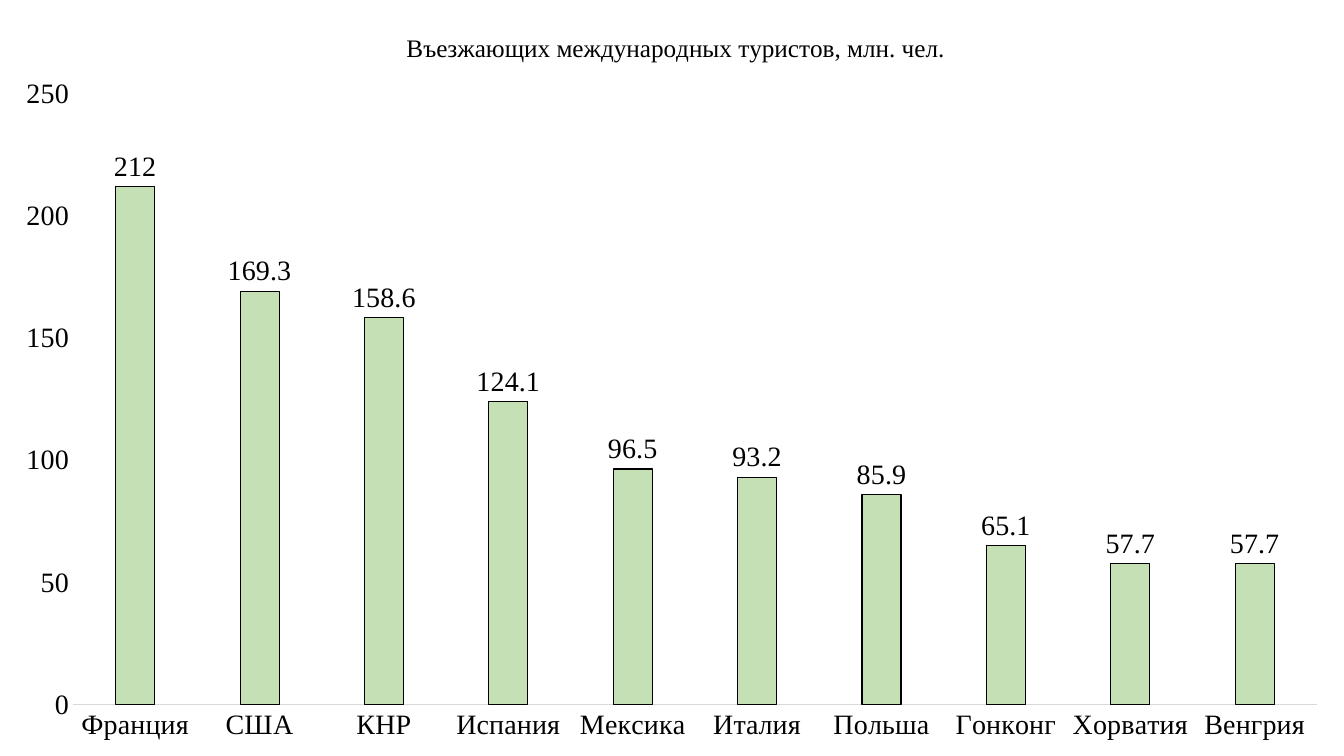
from dataclasses import dataclass

from lxml.etree import SubElement
from pptx import Presentation
from pptx.chart.data import CategoryChartData
from pptx.dml.color import RGBColor
from pptx.enum.chart import XL_CHART_TYPE, XL_LABEL_POSITION, XL_TICK_MARK
from pptx.oxml.ns import qn
from pptx.util import Emu, Pt


@dataclass(frozen=True)
class Theme:
    font: str = "Times New Roman"
    text: RGBColor = RGBColor(0, 0, 0)
    bar: RGBColor = RGBColor(0xC5, 0xE0, 0xB4)
    axis: RGBColor = RGBColor(0xD9, 0xD9, 0xD9)
    title_size: int = 18
    body_size: int = 20
    line_width: float = 0.75


THEME = Theme()
EMU_PER_PX = 914400 / 100.8
SLIDE_W, SLIDE_H = 1344, 756

TITLE = "Въезжающих международных туристов, млн. чел."
TOURISTS = {
    "Франция": 212,
    "США": 169.3,
    "КНР": 158.6,
    "Испания": 124.1,
    "Мексика": 96.5,
    "Италия": 93.2,
    "Польша": 85.9,
    "Гонконг": 65.1,
    "Хорватия": 57.7,
    "Венгрия": 57.7,
}


def px(n):
    return Emu(round(n * EMU_PER_PX))


def style_font(font, size=THEME.body_size, color=THEME.text):
    font.name = THEME.font
    font.size = Pt(size)
    font.bold = False
    font.color.rgb = color


def put_text(tf, text, **style):
    r = tf.paragraphs[0].add_run()
    r.text = text
    style_font(r.font, **style)


def style_line(line, color):
    line.color.rgb = color
    line.width = Pt(THEME.line_width)


def set_layout(parent, index, inner=False, **fractions):
    """Place a chart part by fractions of the chart's size."""
    for old in parent.findall(qn("c:layout")):
        parent.remove(old)
    layout = SubElement(parent, qn("c:layout"))
    parent.insert(index, layout)
    manual = SubElement(layout, qn("c:manualLayout"))
    if inner:
        SubElement(manual, qn("c:layoutTarget")).set("val", "inner")
    for key in ("x", "y"):
        SubElement(manual, qn(f"c:{key}Mode")).set("val", "edge")
    for key, value in fractions.items():
        SubElement(manual, qn(f"c:{key}")).set("val", f"{value:.4f}")


def style_axes(chart):
    for axis in (chart.category_axis, chart.value_axis):
        axis.has_major_gridlines = False
        axis.major_tick_mark = axis.minor_tick_mark = XL_TICK_MARK.NONE
        style_font(axis.tick_labels.font)
    style_line(chart.category_axis.format.line, THEME.axis)
    chart.value_axis.format.line.fill.background()
    chart.value_axis.minimum_scale = 0
    chart.value_axis.maximum_scale = 250
    chart.value_axis.major_unit = 50


def style_bars(plot):
    plot.gap_width = 219
    plot.overlap = -27
    plot.vary_by_categories = False
    bars = plot.series[0]
    bars.format.fill.solid()
    bars.format.fill.fore_color.rgb = THEME.bar
    style_line(bars.format.line, THEME.text)
    labels = bars.data_labels
    labels.show_value = True
    labels.position = XL_LABEL_POSITION.OUTSIDE_END
    style_font(labels.font)


def add_tourist_chart(slide, x, y, w, h):
    data = CategoryChartData()
    data.categories = TOURISTS.keys()
    data.add_series("Series 1", TOURISTS.values())
    frame = slide.shapes.add_chart(
        XL_CHART_TYPE.COLUMN_CLUSTERED, px(x), px(y), px(w), px(h), data)
    chart = frame.chart
    style_font(chart.font)
    chart.has_legend = False

    chart.has_title = True
    title = chart.chart_title
    put_text(title.text_frame, TITLE, size=THEME.title_size)
    set_layout(title.element, 1, x=402 / w, y=28 / h)
    title.element.find(qn("c:overlay")).set("val", "1")

    plot_area = chart.element.find(f".//{qn('c:plotArea')}")
    set_layout(plot_area, 0, inner=True,
               x=73 / w, y=94 / h, w=1244 / w, h=611 / h)
    style_axes(chart)
    style_bars(chart.plots[0])


def main():
    prs = Presentation()
    prs.slide_width, prs.slide_height = px(SLIDE_W), px(SLIDE_H)
    slide = prs.slides.add_slide(prs.slide_layouts[6])
    add_tourist_chart(slide, 0, 0, SLIDE_W, SLIDE_H)
    prs.save("out.pptx")


if __name__ == "__main__":
    main()
